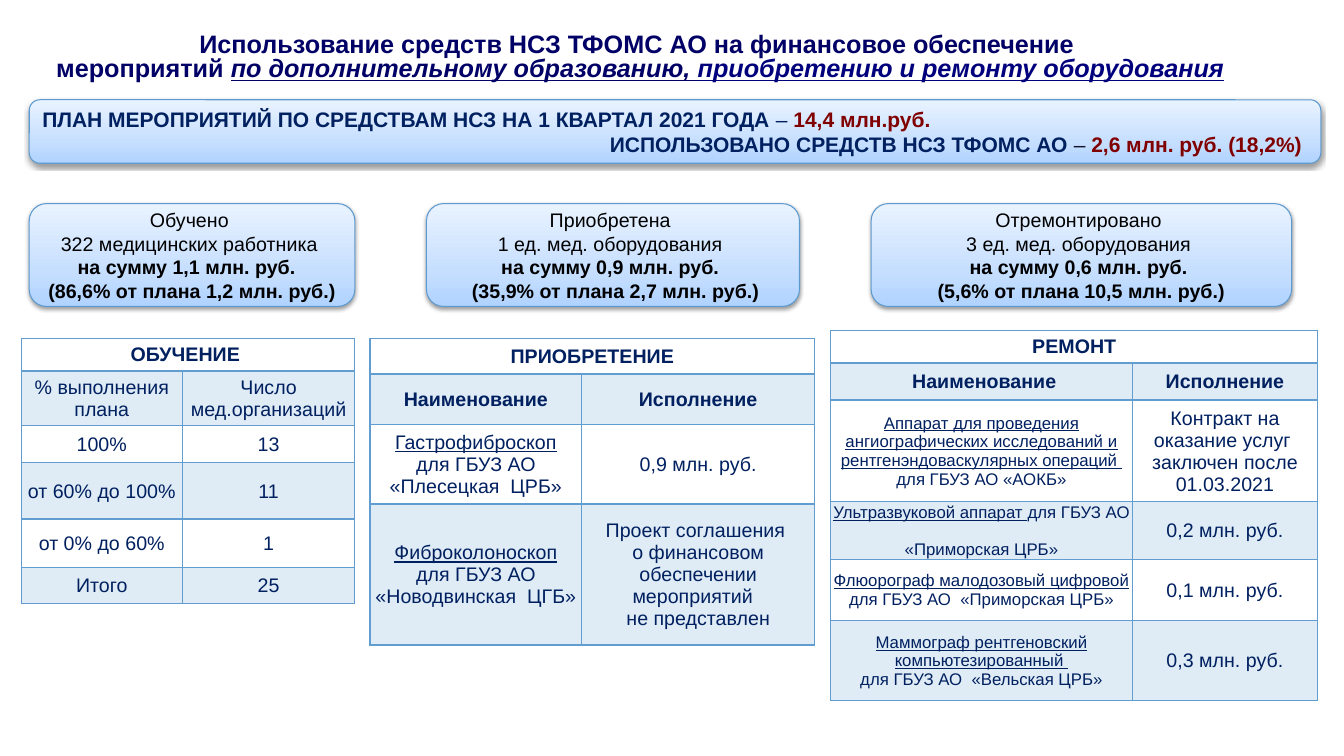
"""Slide on the use of insurance reserve funds: plan, totals and three detail tables."""
from copy import deepcopy

from lxml import etree
from pptx import Presentation
from pptx.dml.color import RGBColor
from pptx.enum import shapes, text
from pptx.oxml.ns import qn
from pptx.util import Inches, Pt

FONT = "Arial"
COLORS = {
    "title": "000066", "title_end": "00007D", "navy": "002060", "dash": "121429",
    "amount": "800000", "black": "000000", "box_line": "5D9ACF", "grid": "629DD1",
}
GRADIENT = [(0, "B0D3FF"), (0.35, "C7DFFF"), (1, "E9F3FF")]

TITLE = [
    ("Использование средств НСЗ ТФОМС АО на финансовое обеспечение \nмероприятий ", "title", ""),
    ("по дополнительному образованию, ", "title", "iu"),
    ("приобретению и ремонту оборудования", "title_end", "iu"),
]
PLAN = [
    ("ПЛАН МЕРОПРИЯТИЙ ПО СРЕДСТВАМ НСЗ НА 1 КВАРТАЛ 2021 ГОДА", "navy", "b"),
    (" – ", "navy", ""),
    ("14,4 млн.руб.", "amount", "b"),
]
USED = [
    ("ИСПОЛЬЗОВАНО СРЕДСТВ НСЗ ТФОМС АО ", "navy", "b"),
    ("– ", "dash", ""),
    ("2,6 млн. руб. (18,2%) ", "amount", "b"),
]
CARDS = [
    (0.29, 3.23, "Обучено \n322 медицинских работника \n",
     "на сумму 1,1 млн. руб.  \n(86,6% от плана 1,2 млн. руб.)"),
    (4.23, 3.7, "Приобретена \n1 ед. мед. оборудования \n",
     "на сумму 0,9 млн. руб. \n (35,9% от плана 2,7 млн. руб.)"),
    (8.64, 4.17, "Отремонтировано \n3 ед. мед. оборудования \n",
     "на сумму 0,6 млн. руб. \n(5,6% от плана 10,5 млн. руб.)"),
]
# Cell paragraphs are lists of (text, colour, style) runs.
TABLES = [
    {"at": (0.21, 3.36), "cols": [1.6, 1.71], "heights": [0.28, 0.54, 0.37, 0.56, 0.48, 0.36],
     "title": "ОБУЧЕНИЕ ", "head_bold": False, "name_size": 14,
     "rows": [("% выполнения плана", "Число мед.организаций"), ("100%", "13"),
              ("от 60% до 100%", "11"), ("от 0% до 60%", "1"), ("Итого", "25")]},
    {"at": (3.67, 3.36), "cols": [2.1, 2.31], "heights": [0.35, 0.5, 0.79, 1.4],
     "title": "ПРИОБРЕТЕНИЕ", "head_bold": True, "name_size": 14,
     "rows": [("Наименование", "Исполнение"),
              ([[("Гастрофиброскоп", "navy", "u")],
                [("для ГБУЗ АО «Плесецкая  ЦРБ»", "navy", "")]], "0,9 млн. руб."),
              ([[("Фиброколоноскоп", "navy", "u")],
                [("для ГБУЗ АО «Новодвинская  ЦГБ»", "navy", "")]],
               "Проект соглашения \nо финансовом обеспечении мероприятий  \nне представлен")]},
    {"at": (8.24, 3.28), "cols": [2.99, 1.84], "heights": [0.31, 0.37, 1.01, 0.45, 0.61, 0.79],
     "title": "РЕМОНТ", "head_bold": True, "name_size": 12,
     "rows": [(" Наименование", "Исполнение"),
              ([[("Аппарат для проведения ангиографических исследований и "
                  "рентгенэндоваскулярных операций ", "navy", "u")],
                [("для ГБУЗ АО «АОКБ»", "navy", "")]],
               "Контракт на оказание услуг  заключен после 01.03.2021"),
              ([[("Ультразвуковой аппарат ", "navy", "u"),
                 ("для ГБУЗ АО \n«Приморская ЦРБ»", "navy", "")]], "0,2 млн. руб."),
              ([[("Флюорограф малодозовый цифровой", "navy", "u"), (" ", "navy", "")],
                [("для ГБУЗ АО  «Приморская ЦРБ»", "navy", "")]], "0,1 млн. руб."),
              ([[("Маммограф рентгеновский компьютезированный ", "navy", "u")],
                [("для ГБУЗ АО  «Вельская ЦРБ»", "navy", "")]], "0,3 млн. руб.")]},
]


def rgb(name):
    return RGBColor.from_string(COLORS[name])


def write(p, runs, size, align, bold=None):
    p.alignment = align
    p.font.name, p.font.size, p.font.bold = FONT, Pt(size), bold
    for content, color, style in runs:
        for i, line in enumerate(content.split("\n")):
            if i:
                p.add_line_break()
            if line:
                r = p.add_run()
                r.text = line
                r.font.color.rgb = rgb(color)
                for flag, name in (("b", "bold"), ("i", "italic"), ("u", "underline")):
                    if flag in style:
                        setattr(r.font, name, True)


def add_box(s, kind, left, top, width, height):
    sp = s.shapes.add_shape(kind, Inches(left), Inches(top), Inches(width), Inches(height))
    sp.fill.gradient()
    sp.fill.gradient_angle = 90
    stops = sp._element.spPr.find(".//" + qn("a:gsLst"))
    stops.append(deepcopy(stops[0]))
    for stop, (position, color) in zip(sp.fill.gradient_stops, GRADIENT):
        stop.position = position
        stop.color.rgb = RGBColor.from_string(color)
    sp.line.color.rgb, sp.line.width = rgb("box_line"), Pt(0.75)
    sp.shadow.inherit = False
    effects = sp._element.spPr.find(qn("a:effectLst"))
    shadow = etree.SubElement(effects, qn("a:outerShdw"), blurRad=str(Pt(3.1)),
                              dist=str(Pt(1.6)), dir="5400000", rotWithShape="0")
    color = etree.SubElement(shadow, qn("a:srgbClr"), val=COLORS["black"])
    etree.SubElement(color, qn("a:alpha"), val="38000")
    tf = sp.text_frame
    tf.word_wrap, tf.vertical_anchor = True, text.MSO_ANCHOR.MIDDLE
    return tf


def style_cell(cell, row):
    tc_pr = cell._tc.get_or_add_tcPr()
    for side in ("lnL", "lnR", "lnT", "lnB"):
        heavy = (row, side) in ((0, "lnB"), (1, "lnT"))
        ln = etree.SubElement(tc_pr, qn("a:" + side), w=str(Pt(2 if heavy else 1)))
        fill = etree.SubElement(ln, qn("a:solidFill"))
        etree.SubElement(fill, qn("a:srgbClr"), val=COLORS["grid"])
    if row % 2:
        cell.fill.solid()
        cell.fill.fore_color.rgb = rgb("grid")
        etree.SubElement(tc_pr.find(qn("a:solidFill"))[0], qn("a:alpha"), val="20000")
    else:
        cell.fill.background()
    cell.vertical_anchor = text.MSO_ANCHOR.MIDDLE
    side, top, bottom = (0.01, 0.01, 0) if row else (0.13, 0.05, 0.05)
    cell.margin_left = cell.margin_right = Inches(side)
    cell.margin_top, cell.margin_bottom = Inches(top), Inches(bottom)


def add_details(s, spec):
    cols, heights = spec["cols"], spec["heights"]
    left, top = spec["at"]
    table = s.shapes.add_table(len(heights), len(cols), Inches(left), Inches(top),
                               Inches(sum(cols)), Inches(sum(heights))).table
    table.first_row = table.horz_banding = False
    for column, width in zip(table.columns, cols):
        column.width = Inches(width)
    for row, height in zip(table.rows, heights):
        row.height = Inches(height)
    table.cell(0, 0).merge(table.cell(0, 1))
    for i, row in enumerate([(spec["title"], "")] + spec["rows"]):
        for j, content in enumerate(row):
            cell = table.cell(i, j)
            style_cell(cell, i)
            paragraphs = [[(content, "navy", "")]] if isinstance(content, str) else content
            size = spec["name_size"] if i > 1 and j == 0 else 14
            bold = i == 0 or (i == 1 and spec["head_bold"])
            tf = cell.text_frame
            for k, runs in enumerate(paragraphs):
                p = tf.add_paragraph() if k else tf.paragraphs[0]
                write(p, runs, size, text.PP_ALIGN.CENTER, bold)


def main():
    prs = Presentation()
    prs.slide_width, prs.slide_height = Inches(13.33), Inches(7.5)
    s = prs.slides.add_slide(prs.slide_layouts[5])

    title = s.shapes.title
    title.left, title.top, title.width, title.height = map(Inches, (0, 0.29, 12.7, 0.63))
    tf = title.text_frame
    tf.word_wrap, tf.auto_size = True, text.MSO_AUTO_SIZE.NONE
    tf.vertical_anchor = text.MSO_ANCHOR.TOP
    tf.paragraphs[0].line_spacing = 0.8
    write(tf.paragraphs[0], TITLE, 18, text.PP_ALIGN.CENTER, True)

    tf = add_box(s, shapes.MSO_SHAPE.ROUNDED_RECTANGLE, 0.29, 0.99, 12.81, 0.63)
    write(tf.paragraphs[0], PLAN, 15, text.PP_ALIGN.LEFT)
    write(tf.add_paragraph(), USED, 15, text.PP_ALIGN.RIGHT)

    for left, width, subject, total in CARDS:
        tf = add_box(s, shapes.MSO_SHAPE.FLOWCHART_ALTERNATE_PROCESS, left, 2.02, width, 1.02)
        write(tf.paragraphs[0], [(subject, "black", ""), (total, "black", "b")],
              14, text.PP_ALIGN.CENTER)

    for spec in TABLES:
        add_details(s, spec)

    prs.save("out.pptx")


if __name__ == "__main__":
    main()
